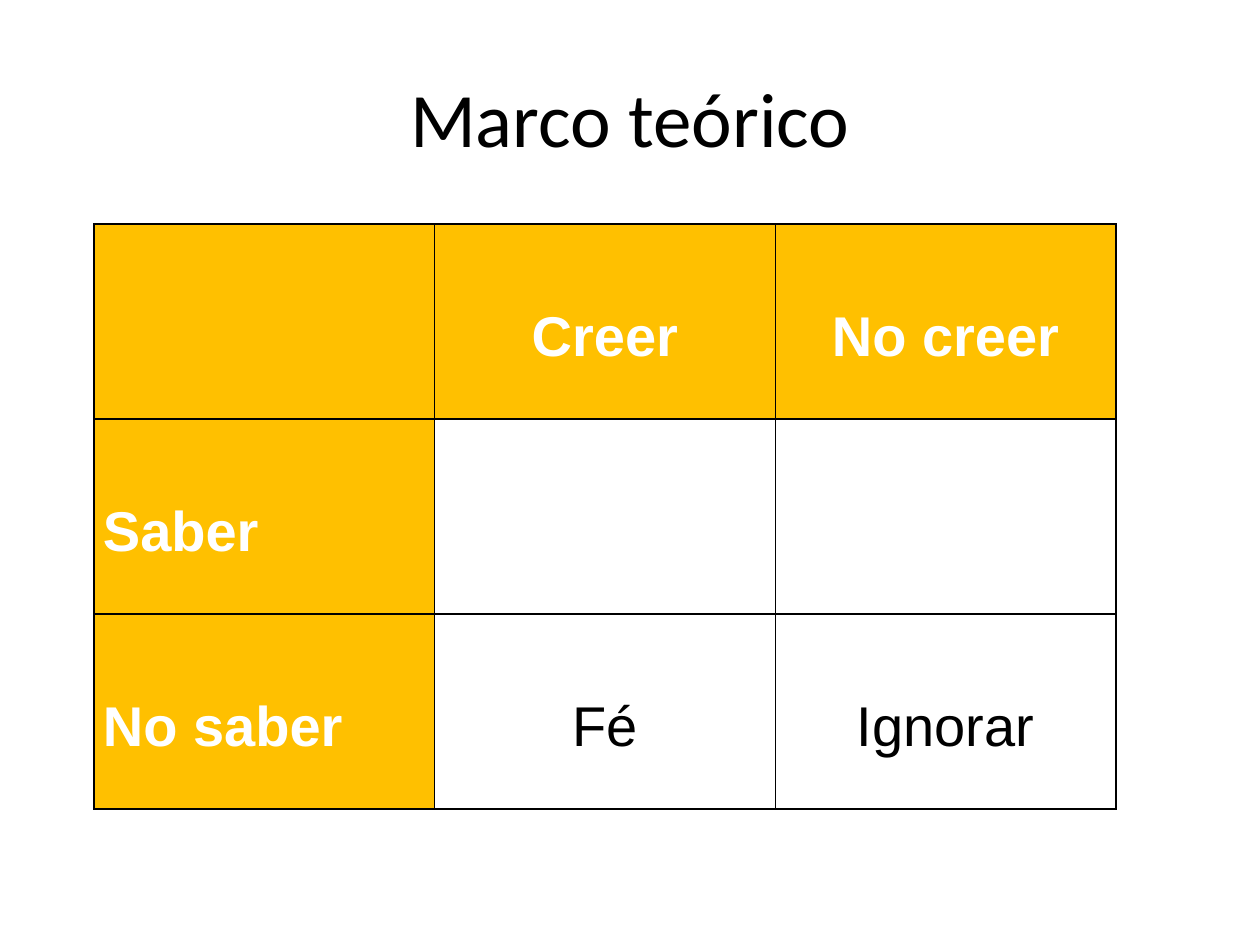
import lxml.etree
import pptx
import pptx.dml.color
import pptx.enum.text
import pptx.oxml.ns
import pptx.util

PIXEL = 914400 / 126
BLACK = pptx.dml.color.RGBColor(0x00, 0x00, 0x00)
WHITE = pptx.dml.color.RGBColor(0xFF, 0xFF, 0xFF)
AMBER = pptx.dml.color.RGBColor(0xFF, 0xC0, 0x00)
CENTER = pptx.enum.text.PP_ALIGN.CENTER
LEFT = pptx.enum.text.PP_ALIGN.LEFT
MIDDLE = pptx.enum.text.MSO_ANCHOR.MIDDLE


def px(length):
    return pptx.util.Emu(round(length * PIXEL))


def write(frame, text, font="Arial", size=32, color=BLACK, bold=False, align=CENTER, spacing=1.5):
    para = frame.paragraphs[0]
    para.alignment = align
    para.line_spacing = spacing
    span = para.add_run()
    span.text = text
    span.font.name = font
    span.font.size = pptx.util.Pt(size)
    span.font.bold = bold
    span.font.color.rgb = color


deck = pptx.Presentation()
deck.slide_width, deck.slide_height = px(1260), px(945)
page = deck.slides.add_slide(deck.slide_layouts[5])

title = page.shapes.title
title.left, title.top, title.width, title.height = px(63), px(38), px(1134), px(158)
title.text_frame.vertical_anchor = MIDDLE
write(title.text_frame, "Marco teórico", font="Calibri", size=44, spacing=1.0)

matrix = [
    ["", "Creer", "No creer"],
    ["Saber", "", ""],
    ["No saber", "Fé", "Ignorar"],
]
table = page.shapes.add_table(3, 3, px(94), px(224), px(1022), px(585)).table
table.first_row = False
table.horz_banding = False
for column in table.columns:
    column.width = px(1022 / 3)
for row in table.rows:
    row.height = px(195)

for row_index, labels in enumerate(matrix):
    for column_index, label in enumerate(labels):
        cell = table.cell(row_index, column_index)
        heading = row_index == 0 or column_index == 0
        cell.vertical_anchor = MIDDLE
        cell.margin_left = cell.margin_right = px(9)
        cell.margin_top = cell.margin_bottom = 0
        if label:
            write(cell.text_frame, label, color=WHITE if heading else BLACK,
                  bold=heading, align=CENTER if column_index else LEFT)

        properties = cell._tc.get_or_add_tcPr()
        for side in ("a:lnL", "a:lnR", "a:lnT", "a:lnB"):
            border = lxml.etree.SubElement(properties, pptx.oxml.ns.qn(side), w=str(pptx.util.Pt(1)))
            paint = lxml.etree.SubElement(border, pptx.oxml.ns.qn("a:solidFill"))
            lxml.etree.SubElement(paint, pptx.oxml.ns.qn("a:srgbClr"), val=str(BLACK))
        if heading:
            cell.fill.solid()
            cell.fill.fore_color.rgb = AMBER
        else:
            cell.fill.background()

deck.save("out.pptx")
